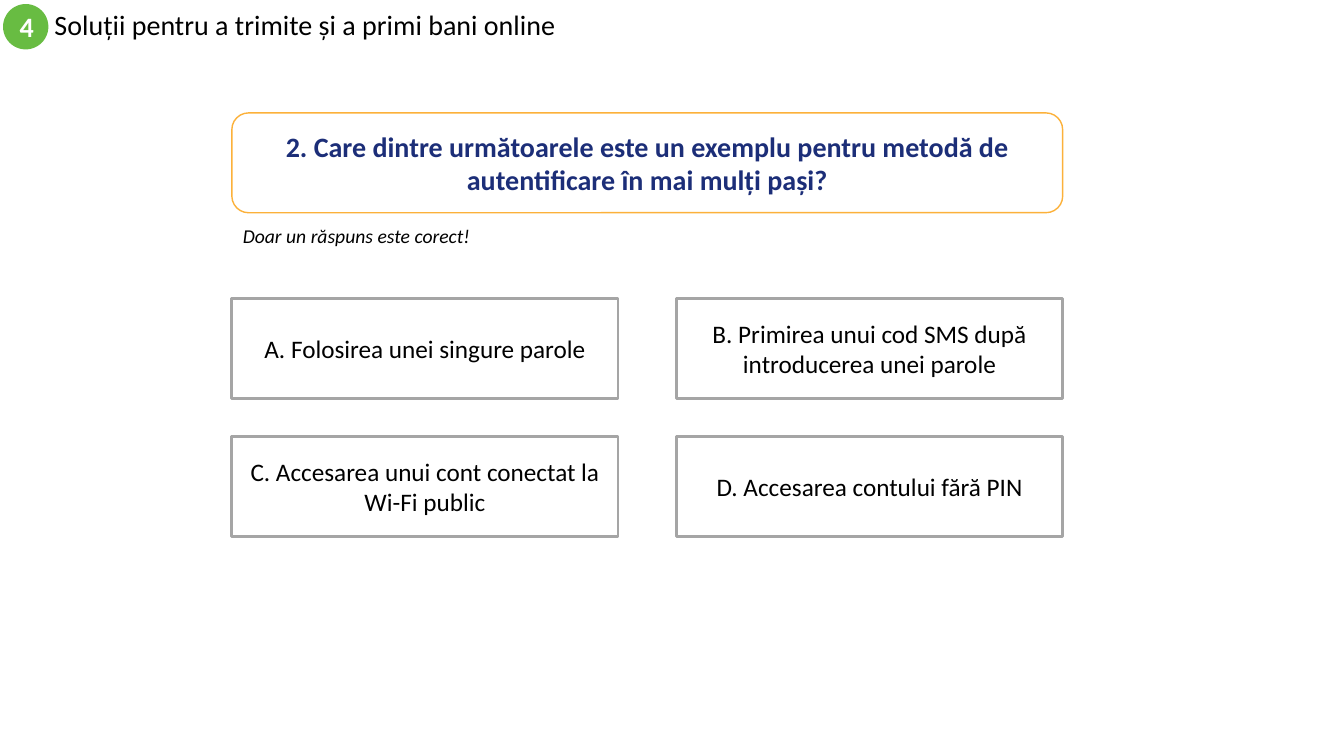
from dataclasses import dataclass

from pptx import Presentation
from pptx.dml.color import RGBColor
from pptx.enum.shapes import MSO_SHAPE
from pptx.enum.text import MSO_ANCHOR, MSO_AUTO_SIZE, PP_ALIGN
from pptx.shapes.autoshape import Shape
from pptx.slide import Slide
from pptx.util import Emu, Pt

EMU_PER_PX = 9144
FONT = "Calibri"
BLACK = "000000"
WHITE = "FFFFFF"
GREEN = "68BC42"
ORANGE = "FCB13A"
NAVY = "1C2E78"
GREY = "A5A5A5"

ANSWER_LEFT, ANSWER_TOP = 230, 296
ANSWER_WIDTH, ANSWER_HEIGHT = 383, 99
COLUMN_STEP, ROW_STEP = 441, 137
ANSWERS = [
    "A. Folosirea unei singure parole",
    "B. Primirea unui cod SMS după introducerea unei parole",
    "C. Accesarea unui cont conectat la Wi-Fi public",
    "D. Accesarea contului fără PIN",
]


@dataclass(frozen=True)
class Box:
    left: int
    top: int
    width: int
    height: int


@dataclass(frozen=True)
class TextStyle:
    size: int
    color: str = BLACK
    bold: bool = False
    italic: bool = False
    align: PP_ALIGN = PP_ALIGN.CENTER
    anchor: MSO_ANCHOR = MSO_ANCHOR.MIDDLE


@dataclass(frozen=True)
class Panel:
    geometry: MSO_SHAPE
    box: Box
    text: str
    style: TextStyle
    fill: str = WHITE
    line: str | None = None
    line_width: int = 1


def px(length: int) -> Emu:
    return Emu(length * EMU_PER_PX)


def rgb(color: str) -> RGBColor:
    return RGBColor.from_string(color)


def edges(box: Box) -> tuple[Emu, Emu, Emu, Emu]:
    return px(box.left), px(box.top), px(box.width), px(box.height)


def write(shape: Shape, text: str, style: TextStyle) -> None:
    frame = shape.text_frame
    frame.word_wrap = True
    frame.auto_size = MSO_AUTO_SIZE.NONE
    frame.vertical_anchor = style.anchor
    frame.margin_left = frame.margin_right = px(10)
    frame.margin_top = frame.margin_bottom = px(5)
    paragraph = frame.paragraphs[0]
    paragraph.alignment = style.align
    run = paragraph.add_run()
    run.text = text
    run.font.name = FONT
    run.font.size = Pt(style.size)
    run.font.bold = style.bold
    run.font.italic = style.italic
    run.font.color.rgb = rgb(style.color)


def draw_panel(slide: Slide, panel: Panel) -> None:
    shape = slide.shapes.add_shape(panel.geometry, *edges(panel.box))
    shape.shadow.inherit = False
    shape.fill.solid()
    shape.fill.fore_color.rgb = rgb(panel.fill)
    if panel.line:
        shape.line.color.rgb = rgb(panel.line)
        shape.line.width = Pt(panel.line_width)
    else:
        shape.line.fill.background()
    write(shape, panel.text, panel.style)


def draw_title(slide: Slide) -> None:
    title = slide.shapes.title
    title.left, title.top, title.width, title.height = edges(Box(44, 4, 800, 45))
    write(title, "Soluții pentru a trimite și a primi bani online",
          TextStyle(20, align=PP_ALIGN.LEFT))
    title.text_frame.paragraphs[0].line_spacing = 0.9


def draw_hint(slide: Slide) -> None:
    hint = slide.shapes.add_textbox(*edges(Box(231, 217, 284, 34)))
    write(hint, "Doar un răspuns este corect!",
          TextStyle(14, italic=True, align=PP_ALIGN.LEFT, anchor=MSO_ANCHOR.TOP))


def answer_panel(index: int, answer: str) -> Panel:
    row, column = divmod(index, 2)
    box = Box(ANSWER_LEFT + column * COLUMN_STEP, ANSWER_TOP + row * ROW_STEP,
              ANSWER_WIDTH, ANSWER_HEIGHT)
    return Panel(MSO_SHAPE.RECTANGLE, box, answer, TextStyle(18),
                 line=GREY, line_width=2)


def main() -> None:
    presentation = Presentation()
    presentation.slide_width, presentation.slide_height = px(1333), px(750)
    slide = presentation.slides.add_slide(presentation.slide_layouts[5])

    chapter = Panel(MSO_SHAPE.OVAL, Box(3, 4, 45, 45), "4",
                    TextStyle(20, WHITE, bold=True), fill=GREEN)
    question = Panel(
        MSO_SHAPE.ROUNDED_RECTANGLE, Box(230, 112, 824, 99),
        "2. Care dintre următoarele este un exemplu pentru metodă de "
        "autentificare în mai mulți pași?",
        TextStyle(20, NAVY, bold=True), line=ORANGE)

    draw_title(slide)
    draw_panel(slide, chapter)
    draw_panel(slide, question)
    draw_hint(slide)
    for index, answer in enumerate(ANSWERS):
        draw_panel(slide, answer_panel(index, answer))

    presentation.save("out.pptx")


if __name__ == "__main__":
    main()
